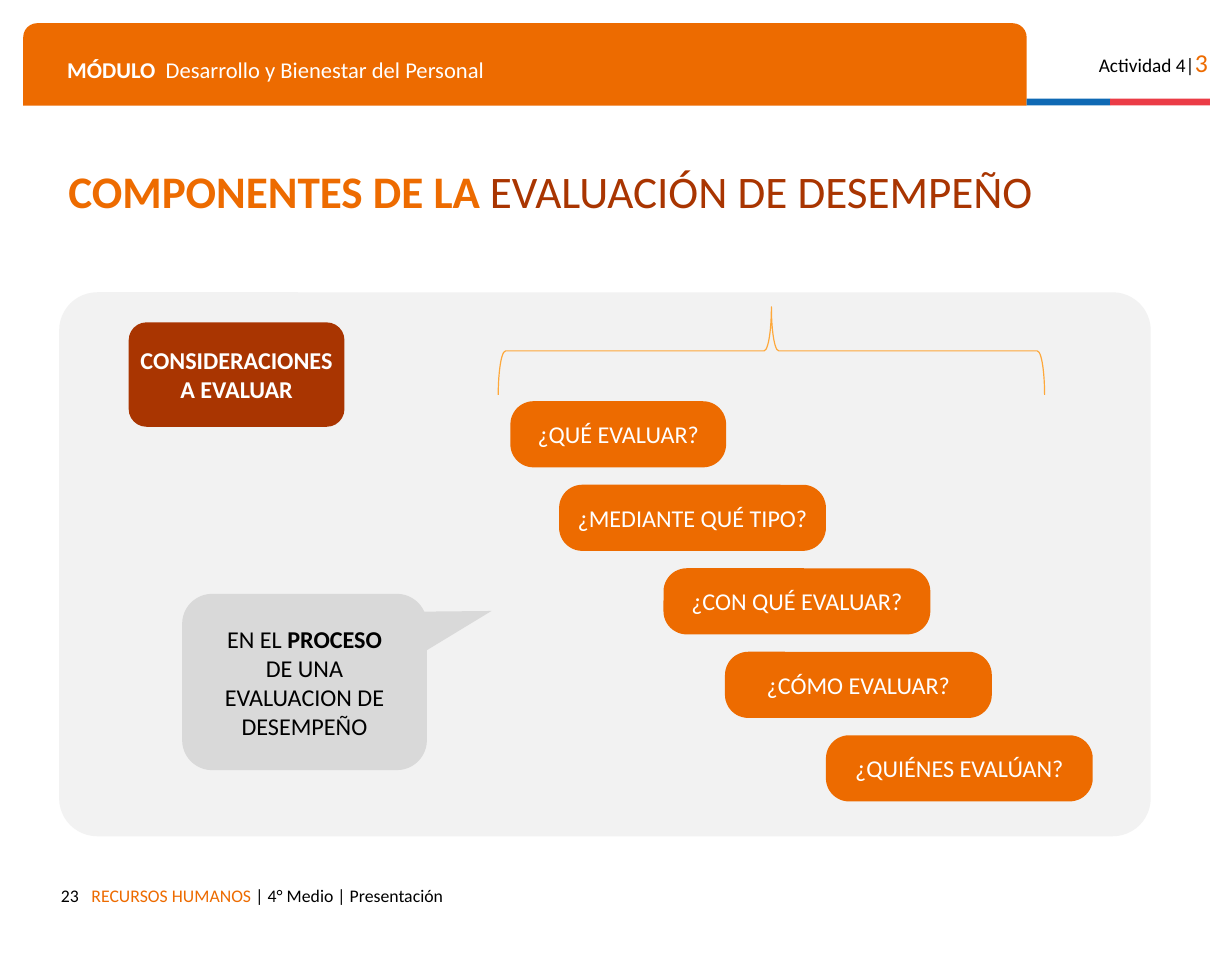
from dataclasses import dataclass

from lxml import etree
from pptx import Presentation
from pptx import util as u
from pptx.dml.color import RGBColor
from pptx.enum import shapes, text
from pptx.oxml.ns import qn

SHAPE = shapes.MSO_SHAPE
ALIGN = text.PP_ALIGN
ANCHOR = text.MSO_ANCHOR


@dataclass(frozen=True)
class Theme:
    font: str = "Calibri"
    orange: str = "ED6B00"
    rust: str = "A93501"
    amber: str = "FEA83A"
    blue: str = "0F69B4"
    red: str = "EB3C46"
    panel: str = "F2F2F2"
    gray: str = "D9D9D9"
    black: str = "000000"
    white: str = "FFFFFF"
    heading: int = 28
    number: int = 16
    label: int = 15
    module: int = 14
    activity: int = 12
    footer: int = 11


THEME = Theme()
# One grid cell is a tenth of an inch, so lengths are columns and rows
COLUMNS, ROWS = 106.2, 82.6


def grid(cells):
    return u.Inches(cells / 10)


def write(frame, *paragraphs, size=THEME.label, color=THEME.black, align=ALIGN.LEFT,
          anchor=ANCHOR.TOP, inset=1, side=None, spacing=None, tab=None):
    """Fill a frame; each paragraph is a list of (words, overrides) runs."""
    frame.word_wrap = True
    frame.auto_size = text.MSO_AUTO_SIZE.NONE
    frame.vertical_anchor = anchor
    frame.margin_top = frame.margin_bottom = grid(inset)
    frame.margin_left = frame.margin_right = grid(inset if side is None else side)
    for index, runs in enumerate(paragraphs):
        paragraph = frame.paragraphs[0] if index == 0 else frame.add_paragraph()
        paragraph.alignment = align
        if spacing:
            paragraph.line_spacing = spacing
        if tab:
            stops = etree.SubElement(paragraph._p.get_or_add_pPr(), qn("a:tabLst"))
            etree.SubElement(stops, qn("a:tab"), pos=str(grid(tab)), algn="l")
        for words, style in runs:
            run = paragraph.add_run()
            run.text = words
            run.font.name = THEME.font
            run.font.size = u.Pt(style.get("size", size))
            run.font.bold = style.get("bold", False)
            run.font.color.rgb = RGBColor.from_string(style.get("color", color))


class SlideBuilder:
    def __init__(self, theme):
        self.theme = theme
        self.deck = Presentation()
        self.deck.slide_width, self.deck.slide_height = grid(COLUMNS), grid(ROWS)
        self.slide = self.deck.slides.add_slide(self.deck.slide_layouts[5])

    def title(self, left, top, width, height, *paragraphs, **style):
        title = self.slide.shapes.title
        title.left, title.top = grid(left), grid(top)
        title.width, title.height = grid(width), grid(height)
        write(title.text_frame, *paragraphs, **style)

    def label(self, left, top, width, height, *paragraphs, **style):
        box = self.slide.shapes.add_textbox(*map(grid, (left, top, width, height)))
        write(box.text_frame, *paragraphs, **style)

    def block(self, kind, left, top, width, height, fill, *paragraphs,
              corner=None, turn=0, **style):
        block = self.slide.shapes.add_shape(kind, *map(grid, (left, top, width, height)))
        block.shadow.inherit = False
        block.fill.solid()
        block.fill.fore_color.rgb = RGBColor.from_string(fill)
        block.line.fill.background()
        block.rotation = turn
        if corner is not None:
            block.adjustments[0] = corner
        if paragraphs:
            write(block.text_frame, *paragraphs, color=style.pop("color", self.theme.white),
                  align=ALIGN.CENTER, anchor=ANCHOR.MIDDLE, inset=0.5, **style)

    def brace(self, left, top, width, height, color):
        brace = self.slide.shapes.add_shape(
            SHAPE.RIGHT_BRACE, *map(grid, (left, top, width, height)))
        brace.shadow.inherit = False
        brace.rotation = 270
        brace.fill.background()
        brace.line.color.rgb = RGBColor.from_string(color)
        brace.line.width = u.Pt(0.75)


def main():
    page = SlideBuilder(THEME)

    # Header band with the two-colour stripe
    page.block(SHAPE.ROUND_2_SAME_RECTANGLE, 2, 2, 86.5, 7.1, THEME.orange, corner=0.17)
    page.block(SHAPE.RECTANGLE, 88.5, 8.5, 7.2, 0.6, THEME.blue)
    page.block(SHAPE.RECTANGLE, 95.7, 8.5, 8.6, 0.6, THEME.red)
    page.label(4.8, 3.8, 81.4, 4.1,
               [("MÓDULO", {"bold": True}), ("\tDesarrollo y Bienestar del Personal", {})],
               size=THEME.module, color=THEME.white, tab=8.5)
    page.label(92.3, 3, 12.8, 4.3,
               [("Actividad 4|", {}), ("3", {"size": THEME.number, "color": THEME.orange})],
               size=THEME.activity, align=ALIGN.RIGHT)

    # Title
    page.title(4.9, 13.9, 97.9, 5.9,
               [("COMPONENTES DE LA ", {"bold": True}),
                ("EVALUACIÓN DE DESEMPEÑO", {"color": THEME.rust})],
               size=THEME.heading, color=THEME.orange, anchor=ANCHOR.MIDDLE, spacing=0.8)

    # Panel with its topic
    page.block(SHAPE.ROUNDED_RECTANGLE, 5.1, 25.2, 94.1, 46.9, THEME.panel, corner=0.07)
    page.block(SHAPE.ROUNDED_RECTANGLE, 11.1, 27.8, 18.6, 9, THEME.rust,
               [("CONSIDERACIONES", {"bold": True})], [("A EVALUAR", {"bold": True})],
               corner=0.17)

    # Staircase of questions under the brace
    page.brace(62.7, 6.7, 7.6, 47.1, THEME.amber)
    questions = [
        (44, 18.6, "¿QUÉ EVALUAR?"),
        (48.2, 23, "¿MEDIANTE QUÉ TIPO?"),
        (57.2, 23, "¿CON QUÉ EVALUAR?"),
        (62.5, 23, "¿CÓMO EVALUAR?"),
        (71.2, 23, "¿QUIÉNES EVALÚAN?"),
    ]
    for step, (left, width, question) in enumerate(questions):
        page.block(SHAPE.ROUNDED_RECTANGLE, left, 34.6 + 7.2 * step, width, 5.7,
                   THEME.orange, [(question, {})], corner=0.35)

    # Process callout and its pointer
    page.block(SHAPE.ROUNDED_RECTANGLE, 15.7, 51.2, 21.1, 15.2, THEME.gray,
               [("EN EL ", {}), ("PROCESO", {"bold": True}),
                (" DE UNA EVALUACION DE DESEMPEÑO", {})],
               corner=0.17, color=THEME.black, side=2.2)
    page.block(SHAPE.ISOSCELES_TRIANGLE, 37, 50.1, 3.9, 7.1, THEME.gray, turn=74.1)

    # Footer
    page.label(4.1, 75.3, 3.7, 3.5, [("23", {})], size=THEME.footer, align=ALIGN.RIGHT)
    page.label(6.9, 75.3, 71.4, 3.5,
               [("RECURSOS HUMANOS ", {"color": THEME.orange}),
                ("| 4° Medio | Presentación", {})],
               size=THEME.footer)

    page.deck.save("out.pptx")


if __name__ == "__main__":
    main()
